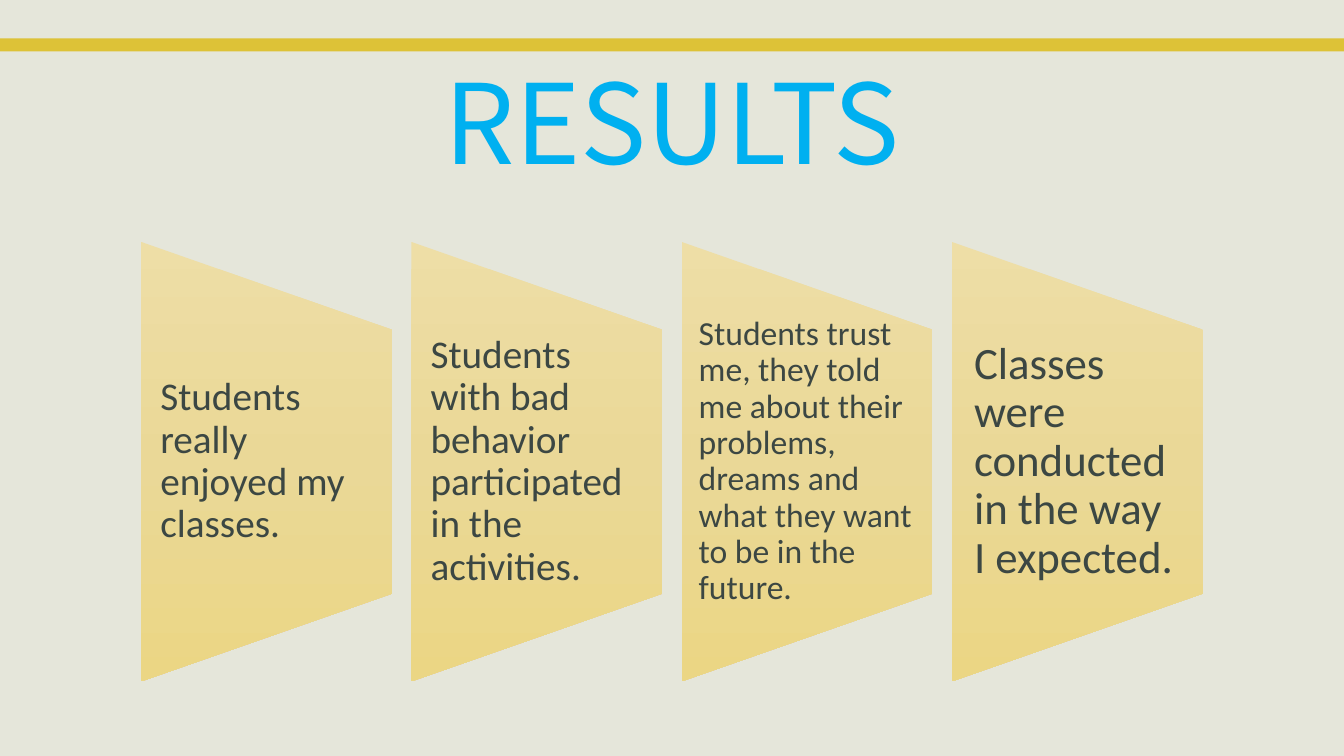
from copy import deepcopy

from pptx import Presentation
from pptx.dml.color import RGBColor
from pptx.enum.shapes import MSO_SHAPE as Shape
from pptx.enum.text import MSO_ANCHOR as Anchor, MSO_AUTO_SIZE as AutoSize, PP_ALIGN as Align
from pptx.util import Inches, Pt

BACKGROUND, BAND, TITLE, TEXT = "E5E6DA", "DDC237", "00B0F0", "3C4743"
CARD_GRADIENT = [(0, "EEDEA6"), (0.5, "EAD897"), (1, "EBD684")]

# Text, font size and side inset of each card
RESULTS = [
    ("Students really enjoyed my classes.", 28, 0.19),
    ("Students with bad behavior participated in the activities.", 28, 0.19),
    ("Students trust me, they told me about their problems, dreams and "
     "what they want to be in the future.", 24, 0.17),
    ("Classes were conducted in the way I expected.", 32, 0.22),
]
CARD_LEFT, CARD_PITCH, CARD_MIDDLE = 1.4, 2.68, 4.58
CARD_WIDTH, CARD_HEIGHT, TEXT_HEIGHT = 2.49, 4.36, 2.62


def color(hex_value):
    return RGBColor.from_string(hex_value)


def style_paragraph(paragraph, size, font_name, hex_value, spacing, align):
    paragraph.alignment = align
    paragraph.line_spacing = spacing
    paragraph.font.size = Pt(size)
    paragraph.font.name = font_name
    paragraph.font.color.rgb = color(hex_value)


def add_band(slide):
    band = slide.shapes.add_shape(
        Shape.RECTANGLE, 0, Inches(0.38), Inches(13.33), Inches(0.13))
    band.shadow.inherit = False
    band.fill.solid()
    band.fill.fore_color.rgb = color(BAND)
    band.line.fill.background()


def set_title(slide, text):
    title = slide.shapes.title
    title.left, title.top = Inches(1.4), Inches(0.51)
    title.width, title.height = Inches(10.53), Inches(1.49)
    frame = title.text_frame
    frame.text = text
    frame.auto_size = AutoSize.NONE
    frame.vertical_anchor = Anchor.MIDDLE
    heading = frame.paragraphs[0]
    style_paragraph(heading, 79.2, "Noto Sans CJK KR", TITLE, 0.95, Align.CENTER)
    # East Asian typeface matches the Latin one
    east_asian = heading.font._element.makeelement(
        "{http://schemas.openxmlformats.org/drawingml/2006/main}ea",
        {"typeface": "Noto Sans CJK KR"})
    heading.font._element.append(east_asian)


def fill_gradient(shape, stops):
    shape.fill.gradient()
    shape.fill.gradient_angle = 270
    first_stop = shape.fill._fill._gradFill.gsLst[0]
    first_stop.addnext(deepcopy(first_stop))
    for stop, (position, hex_value) in zip(shape.fill.gradient_stops, stops):
        stop.position = position
        stop.color.rgb = color(hex_value)
    # Keep the gradient vertical although the card is turned
    shape.fill._fill._gradFill.set("rotWithShape", "0")


def add_card(group, left, text, size, inset):
    # Trapezoid, drawn lying down and turned upright
    card = group.shapes.add_shape(
        Shape.FLOWCHART_MANUAL_OPERATION,
        Inches(left + (CARD_WIDTH - CARD_HEIGHT) / 2),
        Inches(CARD_MIDDLE - CARD_WIDTH / 2),
        Inches(CARD_HEIGHT), Inches(CARD_WIDTH))
    card.rotation = 270
    card.shadow.inherit = False
    card.line.fill.background()
    fill_gradient(card, CARD_GRADIENT)

    # Upright text over the trapezoid
    label = group.shapes.add_textbox(
        Inches(left), Inches(CARD_MIDDLE - TEXT_HEIGHT / 2),
        Inches(CARD_WIDTH), Inches(TEXT_HEIGHT))
    frame = label.text_frame
    frame.word_wrap = True
    frame.vertical_anchor = Anchor.MIDDLE
    frame.margin_left = frame.margin_right = Inches(inset)
    frame.margin_top = frame.margin_bottom = 0
    frame.text = text
    style_paragraph(frame.paragraphs[0], size, "Calibri", TEXT, 0.9, Align.LEFT)


def main():
    deck = Presentation()
    deck.slide_width, deck.slide_height = Inches(13.33), Inches(7.5)
    slide = deck.slides.add_slide(deck.slide_layouts[5])
    slide.background.fill.solid()
    slide.background.fill.fore_color.rgb = color(BACKGROUND)

    add_band(slide)
    set_title(slide, "RESULTS")

    # Row of result cards
    cards = slide.shapes.add_group_shape()
    for column, (text, size, inset) in enumerate(RESULTS):
        add_card(cards, CARD_LEFT + column * CARD_PITCH, text, size, inset)

    deck.save("out.pptx")


if __name__ == "__main__":
    main()
